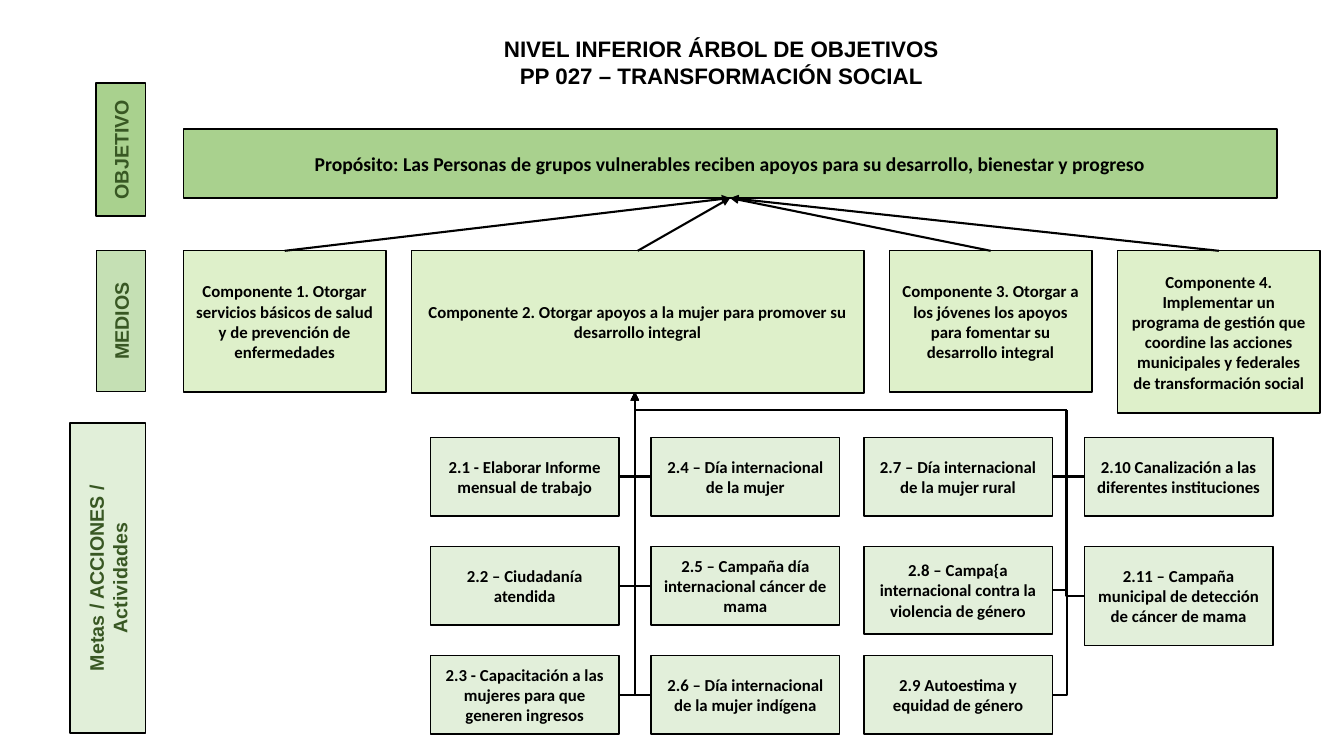
from lxml.etree import SubElement
from pptx import Presentation
from pptx.dml.color import RGBColor
from pptx.enum.shapes import MSO_CONNECTOR as Link, MSO_SHAPE as Form
from pptx.enum.text import MSO_ANCHOR as Anchor, MSO_AUTO_SIZE as Fit, PP_ALIGN as Align
from pptx.oxml.ns import qn
from pptx.util import Cm, Pt

BLACK, DARK_GREEN = "000000", "385723"
MID_GREEN, PALE_GREEN, LIME = "A9D18E", "C5E0B4", "92D050"


def color(value):
    return RGBColor.from_string(value)


def assign(target, values):
    for name, value in values.items():
        setattr(target, name, value)


class Tree:
    def __init__(self, page):
        self.page = page

    def label(self, frame, lines, size, font, ink=BLACK, anchor=Anchor.MIDDLE):
        assign(frame, {"word_wrap": True, "vertical_anchor": anchor})
        for index, line in enumerate(lines):
            para = frame.add_paragraph() if index else frame.paragraphs[0]
            assign(para, {"alignment": Align.CENTER, "line_spacing": 1.0, "space_before": Pt(0)})
            span = para.add_run()
            span.text = line
            assign(span.font, {"size": Pt(size), "name": font, "bold": True})
            span.font.color.rgb = color(ink)

    def title(self, lines, area):
        box = self.page.shapes.title
        assign(box, dict(zip(("left", "top", "width", "height"), map(Cm, area))))
        self.label(box.text_frame, lines, 16, "Arial", anchor=Anchor.TOP)
        box.text_frame.auto_size = Fit.SHAPE_TO_FIT_TEXT

    def box(self, text, area, fill, opacity=100, size=12, font="Calibri", ink=BLACK, turn=0):
        box = self.page.shapes.add_shape(Form.FLOWCHART_PROCESS, *map(Cm, area))
        box.rotation = turn
        box.shadow.inherit = False
        box.fill.solid()
        box.fill.fore_color.rgb = color(fill)
        if opacity < 100:
            tone = box._element.spPr.find(qn("a:solidFill"))[0]
            SubElement(tone, qn("a:alpha"), val=str(opacity * 1000))
        box.line.color.rgb = color(BLACK)
        box.line.width = Pt(1)
        self.label(box.text_frame, [text], size, font, ink)
        return box

    def band(self, text, area, fill, opacity=100):
        return self.box(text, area, fill, opacity, 14, "Arial", DARK_GREEN, 270)

    def line(self, start, end, kind=Link.STRAIGHT, arrow=True):
        line = self.page.shapes.add_connector(kind, *map(Cm, start + end))
        line.line.color.rgb = color(BLACK)
        line.line.width = Pt(1.5)
        if arrow:
            SubElement(line._element.spPr.find(qn("a:ln")), qn("a:tailEnd"), type="triangle")
        SubElement(line._element.spPr, qn("a:effectLst"))
        return line

    def arrow(self, source, target):
        line = self.line((0, 0), (0, 0))
        line.begin_connect(source, 0)
        line.end_connect(target, 2)

    def corner(self, start, end, arrow=True):
        line = self.line(start, end, Link.ELBOW, arrow)
        line._element.spPr.find(qn("a:prstGeom")).set("prst", "bentConnector2")


def main():
    deck = Presentation()
    assign(deck, {"slide_width": Cm(33.87), "slide_height": Cm(19.05)})
    tree = Tree(deck.slides.add_slide(deck.slide_layouts[5]))
    tree.title(["NIVEL INFERIOR ÁRBOL DE OBJETIVOS", "PP 027 – TRANSFORMACIÓN SOCIAL"],
               (8.43, 0.76, 19.5, 1.63))

    tree.band("OBJETIVO", (1.37, 3.15, 3.35, 1.24), MID_GREEN)
    tree.band("MEDIOS", (1.27, 7.47, 3.56, 1.24), PALE_GREEN)
    tree.band("Metas / ACCIONES / Actividades", (-1.19, 13.61, 7.82, 1.91), PALE_GREEN, 50)

    left = 4.62
    purpose = tree.box("Propósito: Las Personas de grupos vulnerables reciben apoyos para su "
                       "desarrollo, bienestar y progreso", (left, 3.25, 27.56, 1.74), MID_GREEN, size=14)

    components = [
        ("Componente 1. Otorgar servicios básicos de salud y de prevención de enfermedades", 5.11, 3.56),
        ("Componente 2. Otorgar apoyos a la mujer para promover su desarrollo integral", 11.4, 3.58),
        ("Componente 3. Otorgar a los jóvenes los apoyos para fomentar su desarrollo integral", 5.11, 3.56),
        ("Componente 4. Implementar un programa de gestión que coordine las acciones municipales "
         "y federales de transformación social", 5.11, 4.09),
    ]
    for text, width, height in components:
        component = tree.box(text, (left, 6.32, width, height), LIME, 30)
        tree.arrow(component, purpose)
        left += width + 0.64

    width, first_row, row_step, normal = 4.75, 11.02, 2.75, 1.98
    main_trunk, side_trunk = (16, 9.88), (26.88, 10.34)
    columns = [
        (10.85, main_trunk, 1, [("2.1 - Elaborar Informe mensual de trabajo", normal),
                                ("2.2 – Ciudadanía atendida", normal),
                                ("2.3 - Capacitación a las mujeres para que generen ingresos", normal)]),
        (16.41, main_trunk, 0, [("2.4 – Día internacional de la mujer", normal),
                                ("2.5 – Campaña día internacional cáncer de mama", normal),
                                ("2.6 – Día internacional de la mujer indígena", normal)]),
        (21.77, side_trunk, 1, [("2.7 – Día internacional de la mujer rural", normal),
                                ("2.8 – Campa{a internacional contra la violencia de género", 2.21),
                                ("2.9 Autoestima y equidad de género", normal)]),
        (27.33, side_trunk, 0, [("2.10 Canalización a las diferentes instituciones", normal),
                                ("2.11 – Campaña municipal de detección de cáncer de mama", 2.49)]),
    ]
    for x, trunk, right_side, activities in columns:
        for row, (text, height) in enumerate(activities):
            y = first_row + row * row_step
            tree.box(text, (x, y, width, height), PALE_GREEN, 49)
            tree.corner((x + width * right_side, y + height / 2), trunk, trunk == main_trunk)
    tree.corner(side_trunk, main_trunk)

    deck.save("out.pptx")


if __name__ == "__main__":
    main()
